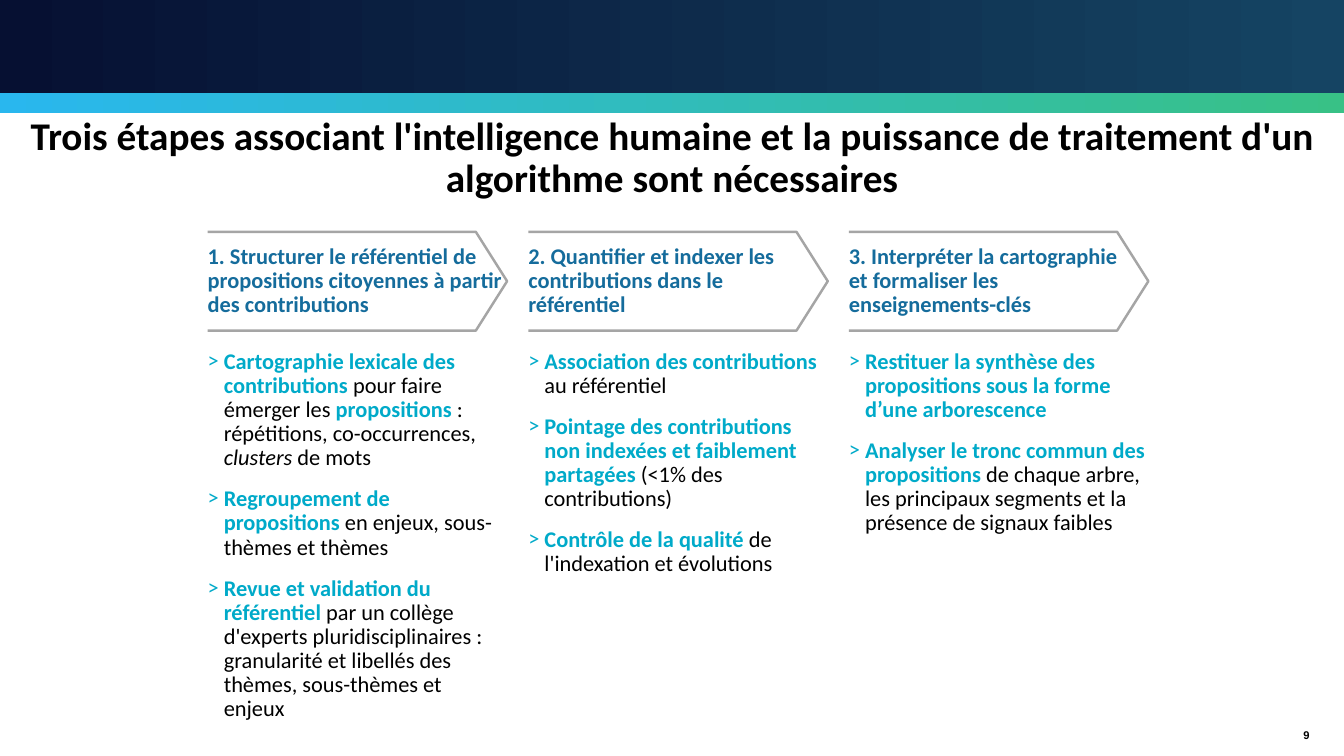
from dataclasses import dataclass

from lxml.etree import SubElement
from pptx import Presentation
from pptx.dml.color import RGBColor
from pptx.enum.shapes import MSO_SHAPE as Preset
from pptx.enum.text import MSO_ANCHOR as Anchor, MSO_AUTO_SIZE as AutoSize, PP_ALIGN as Align
from pptx.oxml.ns import qn
from pptx.util import Inches, Pt


@dataclass(frozen=True)
class Theme:
    """Colours, fonts and type sizes of the slide."""
    navy: str = "061032"
    petrol: str = "154463"
    sky: str = "29B7EE"
    green: str = "38C186"
    outline: str = "A5A5A5"
    step: str = "156C9C"
    accent: str = "00AAC9"
    ink: str = "000000"
    text_font: str = "Calibri"
    number_font: str = "Arial"
    title_size: int = 28
    text_size: int = 16
    number_size: int = 8
    line_spacing: float = 0.9


class StepSlide:
    """Draws the elements of a process slide in one theme."""

    def __init__(self, slide, theme):
        self.slide = slide
        self.theme = theme

    def place(self, shape, left, top, width, height):
        box = dict(left=left, top=top, width=width, height=height)
        for name, value in box.items():
            setattr(shape, name, Inches(value))

    def frame(self, shape, **values):
        for name, value in {"word_wrap": True, **values}.items():
            setattr(shape.text_frame, name, value)
        return shape.text_frame

    def margins(self, top=0):
        return dict(margin_left=0, margin_top=Inches(top), margin_right=0, margin_bottom=0)

    def layout_paragraph(self, paragraph, **values):
        defaults = dict(alignment=Align.LEFT, line_spacing=self.theme.line_spacing, space_before=Pt(0))
        for name, value in {**defaults, **values}.items():
            setattr(paragraph, name, value)

    def add_text(self, paragraph, text, color, **values):
        theme = self.theme
        defaults = dict(name=theme.text_font, size=Pt(theme.text_size), bold=True, italic=False)
        for index, line in enumerate(text.split("\n")):
            if index:
                paragraph.add_line_break()
            run = paragraph.add_run()
            run.text = line
            for name, value in {**defaults, **values}.items():
                setattr(run.font, name, value)
            run.font.color.rgb = RGBColor.from_string(color)

    def band(self, top, height, colors):
        shape = self.slide.shapes.add_shape(
            Preset.RECTANGLE, 0, Inches(top), Inches(13.33), Inches(height))
        shape.shadow.inherit = False
        shape.line.fill.background()
        shape.fill.gradient()
        shape.fill.gradient_angle = 0
        for stop, position, color in zip(shape.fill.gradient_stops, (0, 1), colors):
            stop.position = position
            stop.color.rgb = RGBColor.from_string(color)

    def title(self, text):
        shape = self.slide.shapes.title
        self.place(shape, 0.13, 1.21, 13.07, 0.73)
        frame = self.frame(shape, vertical_anchor=Anchor.MIDDLE, auto_size=AutoSize.NONE)
        self.layout_paragraph(frame.paragraphs[0], alignment=Align.CENTER)
        self.add_text(frame.paragraphs[0], text, self.theme.ink, size=Pt(self.theme.title_size))

    def arrow(self, left, top, width, height, text):
        tip = 0.31
        shoulder = left + width - tip
        corners = [(shoulder, top), (left + width, top + height / 2),
                   (shoulder, top + height), (left, top + height)]
        builder = self.slide.shapes.build_freeform(Inches(left), Inches(top))
        builder.add_line_segments([(Inches(x), Inches(y)) for x, y in corners], close=False)
        shape = builder.convert_to_shape()
        shape.shadow.inherit = False
        shape.fill.background()
        shape.line.color.rgb = RGBColor.from_string(self.theme.outline)
        shape.line.width = Pt(1.75)
        frame = self.frame(shape, vertical_anchor=Anchor.MIDDLE, **self.margins())
        self.layout_paragraph(frame.paragraphs[0])
        self.add_text(frame.paragraphs[0], text, self.theme.step)

    def bullet(self, paragraph):
        properties = paragraph._p.get_or_add_pPr()
        indent = Inches(0.16)
        properties.set("marL", str(indent))
        properties.set("indent", str(-indent))
        SubElement(properties, qn("a:buFont"), typeface=self.theme.text_font)
        SubElement(properties, qn("a:buChar"), char=">")

    def bullets(self, shape, left, top, width, height, items):
        theme = self.theme
        styles = {
            "key": dict(color=theme.accent),
            "plain": dict(color=theme.ink, bold=False),
            "italic": dict(color=theme.ink, bold=False, italic=True),
        }
        self.place(shape, left, top, width, height)
        frame = self.frame(shape, vertical_anchor=Anchor.TOP,
                           auto_size=AutoSize.SHAPE_TO_FIT_TEXT, **self.margins(0.12))
        for index, item in enumerate(items):
            paragraph = frame.add_paragraph() if index else frame.paragraphs[0]
            self.bullet(paragraph)
            self.layout_paragraph(paragraph, space_before=Pt(12 if index else 0))
            for style, text in item:
                self.add_text(paragraph, text, **styles[style])

    def page_number(self, text):
        shape = self.slide.shapes.add_textbox(Inches(12.83), Inches(7.18), Inches(0.4), Inches(0.24))
        paragraph = self.frame(shape).paragraphs[0]
        self.add_text(paragraph, text, self.theme.ink,
                      name=self.theme.number_font, size=Pt(self.theme.number_size))


STEPS = [
    ("1. Structurer le référentiel de propositions citoyennes à partir des contributions", 3.85, [
        [("key", "Cartographie lexicale des contributions "), ("plain", "pour faire émerger les "),
         ("key", "propositions"), ("plain", " : répétitions, co-occurrences, "),
         ("italic", "clusters"), ("plain", " de mots")],
        [("key", "Regroupement de propositions "), ("plain", "en enjeux, sous-thèmes et thèmes")],
        [("key", "Revue et validation du référentiel "),
         ("plain", "par un collège d'experts pluridisciplinaires : granularité et libellés "
                   "des thèmes, sous-thèmes et enjeux")],
    ]),
    ("2. Quantifier et indexer les contributions dans le \nréférentiel", 2.39, [
        [("key", "Association des contributions "), ("plain", "au référentiel")],
        [("key", "Pointage des contributions non indexées et faiblement partagées "),
         ("plain", "(<1% des contributions)")],
        [("key", "Contrôle de la qualité "), ("plain", "de l'indexation et évolutions")],
    ]),
    ("3. Interpréter la cartographie \net formaliser les enseignements-clés", 2.23, [
        [("key", "Restituer la synthèse des propositions sous la forme d’une arborescence")],
        [("key", "Analyser le tronc commun des propositions "),
         ("plain", "de chaque arbre, les principaux segments et la présence de signaux faibles")],
    ]),
]


def main():
    presentation = Presentation()
    presentation.slide_width = Inches(13.33)
    presentation.slide_height = Inches(7.5)
    slide = presentation.slides.add_slide(presentation.slide_layouts.get_by_name("Comparison"))
    theme = Theme()
    page = StepSlide(slide, theme)

    page.band(-0.06, 1.18, (theme.navy, theme.petrol))
    page.band(0.92, 0.2, (theme.sky, theme.green))
    page.title("Trois étapes associant l'intelligence humaine et la puissance "
               "de traitement d'un algorithme sont nécessaires")

    first_left, pitch, width = 2.06, 3.18, 2.97
    bodies = list(slide.placeholders)[1:]
    for index, (heading, height, items) in enumerate(STEPS):
        left = first_left + index * pitch
        page.arrow(left, 2.3, width, 0.98, heading)
        page.bullets(bodies[index], left, 3.35, width, height, items)
    for unused in bodies[len(STEPS):]:
        unused.element.getparent().remove(unused.element)

    page.page_number("9")
    presentation.save("out.pptx")


if __name__ == "__main__":
    main()
